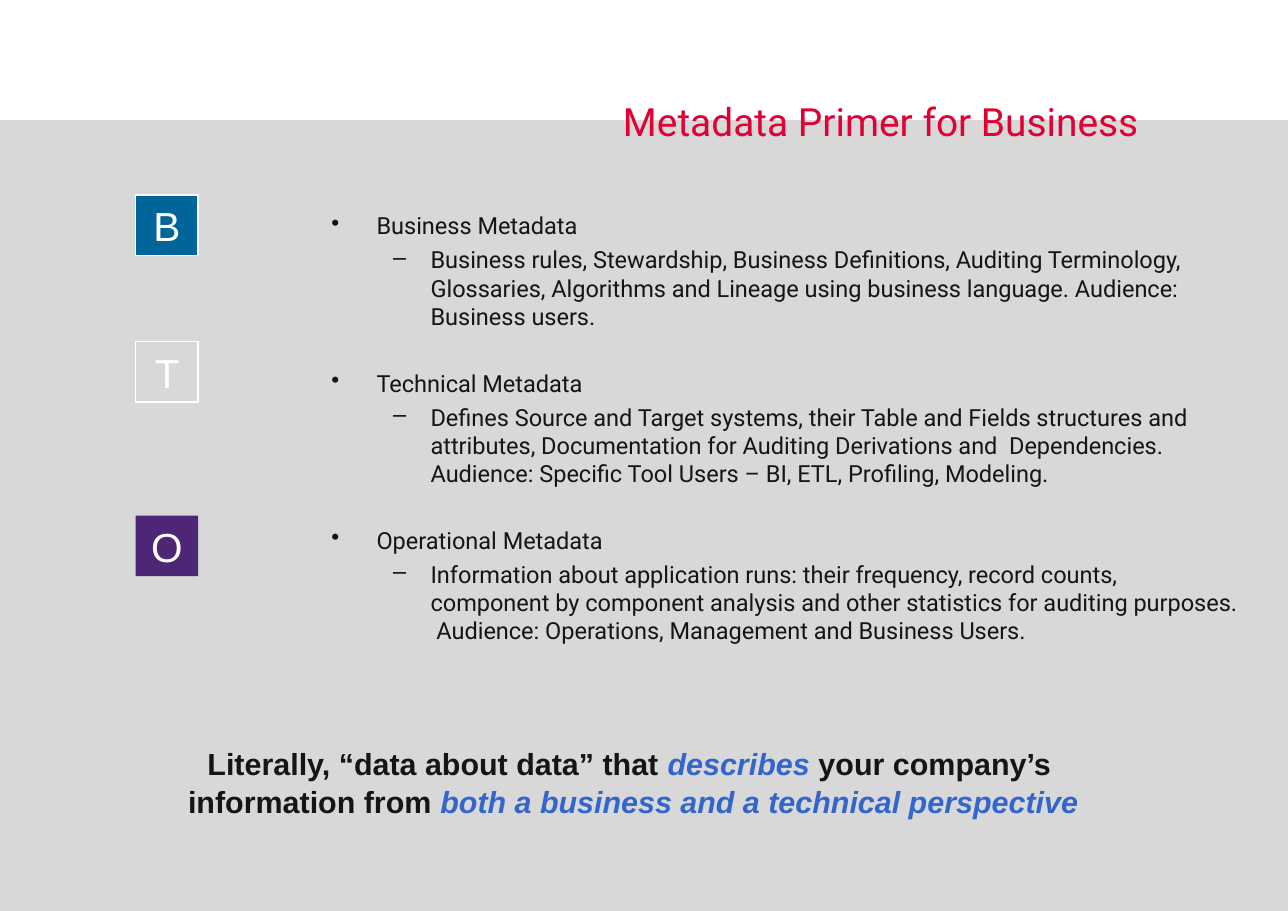
from lxml.etree import SubElement
from pptx import Presentation
from pptx.dml.color import RGBColor
from pptx.enum.shapes import MSO_SHAPE as Shape
from pptx.enum.text import MSO_ANCHOR as Anchor, PP_ALIGN as Align
from pptx.oxml.ns import qn
from pptx.util import Pt

COLORS = {
    "panel": "D8D8D8", "title": "E00034", "ink": "151515", "accent": "3366CC",
    "white": "FFFFFF", "business": "006699", "operational": "4E2676",
}

TITLE = {"name": "Roboto", "size": Pt(25.4), "bold": False}
BODY = {"name": "Roboto", "size": Pt(15.4)}
LETTER = {"name": "Arial", "size": Pt(26.5)}
CLOSING = {"name": "Arial", "size": Pt(19.9), "bold": True}

TOPICS = [
    ("Business Metadata",
     "Business rules, Stewardship, Business Definitions, Auditing Terminology, "
     "Glossaries, Algorithms and Lineage using business language. Audience: "
     "Business users."),
    ("Technical Metadata",
     "Defines Source and Target systems, their Table and Fields structures and "
     "attributes, Documentation for Auditing Derivations and  Dependencies. "
     "Audience: Specific Tool Users – BI, ETL, Profiling, Modeling."),
    ("Operational Metadata",
     "Information about application runs: their frequency, record counts, "
     "component by component analysis and other statistics for auditing "
     "purposes.  Audience: Operations, Management and Business Users."),
]

TILES = [
    ("B", 127.4, "business", "white"),
    ("T", 223.2, "panel", "white"),
    ("O", 337, "operational", None),
]

CLOSING_LINES = [
    [("Literally, “data about data” that ", "ink"), ("describes ", "accent"),
     ("your company’s ", "ink")],
    [("information from ", "ink"),
     ("both a business and a technical perspective", "accent")],
]


def rgb(color):
    return RGBColor.from_string(COLORS[color])


def style(font, values, color):
    for name, value in values.items():
        setattr(font, name, value)
    font.color.rgb = rgb(color)


def add_run(paragraph, text, values, color):
    run = paragraph.add_run()
    run.text = text
    style(run.font, values, color)


def add_rect(slide, left, top, width, height, fill, line=None):
    rect = slide.shapes.add_shape(
        Shape.RECTANGLE, Pt(left), Pt(top), Pt(width), Pt(height))
    rect.shadow.inherit = False
    rect.fill.solid()
    rect.fill.fore_color.rgb = rgb(fill)
    if line:
        rect.line.color.rgb = rgb(line)
        rect.line.width = Pt(1)
    else:
        rect.line.fill.background()
    return rect


def add_text_frame(slide, left, top, width, height):
    box = slide.shapes.add_textbox(Pt(left), Pt(top), Pt(width), Pt(height))
    box.text_frame.word_wrap = True
    return box.text_frame


def next_paragraph(frame, space_before):
    if not frame.paragraphs[0].runs:
        return frame.paragraphs[0]
    paragraph = frame.add_paragraph()
    paragraph.space_before = Pt(space_before)
    return paragraph


def add_bullet(frame, text, mark, margin, hanging, space_before, level):
    paragraph = next_paragraph(frame, space_before)
    paragraph.level = level
    properties = paragraph._p.get_or_add_pPr()
    properties.set("marL", str(Pt(margin)))
    properties.set("indent", str(-Pt(hanging)))
    SubElement(properties, qn("a:buChar"), char=mark)
    add_run(paragraph, text, BODY, "ink")


def add_title(slide, text):
    title = slide.shapes.title
    place = {"left": Pt(36), "top": Pt(59.8), "width": Pt(715.7), "height": Pt(38.2)}
    for name, value in place.items():
        setattr(title, name, value)
    title.text_frame.vertical_anchor = Anchor.MIDDLE
    heading = title.text_frame.paragraphs[0]
    heading.alignment = Align.RIGHT
    add_run(heading, text, TITLE, "title")


def add_topics(slide):
    frame = add_text_frame(slide, 209.5, 134.6, 608.4, 328.3)
    for heading, detail in TOPICS:
        add_bullet(frame, heading, "•", 29.5, 29.5, 25, 0)
        add_bullet(frame, detail, "–", 64.8, 24.5, 3.8, 1)


def add_tile(slide, letter, top, fill, line):
    tile = add_rect(slide, 88.6, top, 41, 39.6, fill, line)
    frame = tile.text_frame
    frame.vertical_anchor = Anchor.MIDDLE
    paragraph = frame.paragraphs[0]
    paragraph.alignment = Align.CENTER
    add_run(paragraph, letter, LETTER, "white")


def add_closing(slide):
    frame = add_text_frame(slide, 56.9, 483.1, 714.2, 55.4)
    for pieces in CLOSING_LINES:
        paragraph = next_paragraph(frame, 1.3)
        paragraph.alignment = Align.CENTER
        for text, color in pieces:
            add_run(paragraph, text, {**CLOSING, "italic": color == "accent"}, color)


def main():
    """Build the metadata primer slide."""
    deck = Presentation()
    deck.slide_width, deck.slide_height = Pt(841.7), Pt(595.4)
    slide = deck.slides.add_slide(deck.slide_layouts[5])
    panel = add_rect(slide, 0, 78.5, 841.7, 516.9, "panel")
    slide.shapes.title._element.addprevious(panel._element)
    add_title(slide, "Metadata Primer for Business")
    add_topics(slide)
    for tile in TILES:
        add_tile(slide, *tile)
    add_closing(slide)
    deck.save("out.pptx")


if __name__ == "__main__":
    main()
